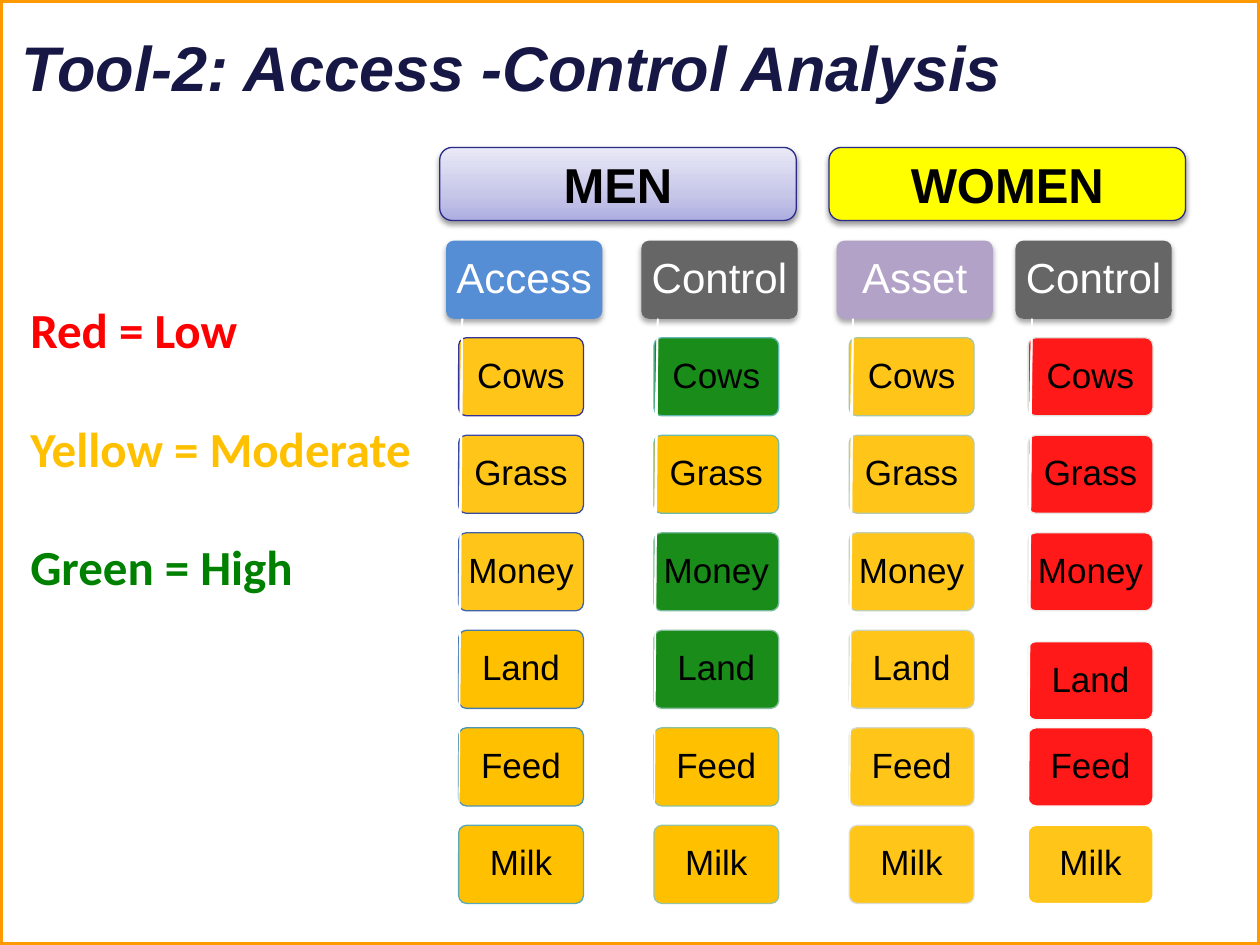
"""Build the access and control analysis slide with rated resources for men and women."""
from copy import deepcopy
from dataclasses import dataclass

from lxml import etree
from pptx import Presentation
from pptx.dml.color import RGBColor
from pptx.enum.shapes import MSO_CONNECTOR, MSO_SHAPE
from pptx.enum.text import MSO_ANCHOR, MSO_AUTO_SIZE, PP_ALIGN
from pptx.oxml.ns import qn
from pptx.util import Inches, Pt

ROUNDED, RECTANGLE = MSO_SHAPE.ROUNDED_RECTANGLE, MSO_SHAPE.RECTANGLE
STRAIGHT = MSO_CONNECTOR.STRAIGHT
TOP, MIDDLE = MSO_ANCHOR.TOP, MSO_ANCHOR.MIDDLE
LEFT, CENTER = PP_ALIGN.LEFT, PP_ALIGN.CENTER
NO_AUTOFIT = MSO_AUTO_SIZE.NONE

COLORS = {
    "low": "FF0000", "moderate": "FFC000", "high": "008000",
    "access": "558ED5", "control": "666666", "asset": "B3A2C7",
    "women": "FFFF00", "group_line": "2A2A89", "title": "171745",
    "frame": "FF9900", "white": "FFFFFF", "black": "000000",
}
MEN_GRADIENT = ((0, "ADADE1"), (0.35, "C6C6E9"), (1, "E9E9F7"))
RESOURCES = ("Cows", "Grass", "Money", "Land", "Feed", "Milk")
LEGEND = (("Red = Low", "low"), ("Yellow = Moderate", "moderate"), ("Green = High", "high"))

HEADER_TOP, HEADER_WIDTH, BOX_HEIGHT = 1.91, 1.24, 0.62
HEADER_BOTTOM = HEADER_TOP + BOX_HEIGHT
CARD_WIDTH, CARD_TOP, LAST_CARD_TOP = 0.99, 2.68, 6.55
CARD_PITCH = (LAST_CARD_TOP - CARD_TOP) / (len(RESOURCES) - 1)
HEADER_OUTDENT, STEM_INSET = 0.1, 0.03

BOX_FRAME = {
    "word_wrap": False, "vertical_anchor": MIDDLE,
    "margin_left": Inches(0.03), "margin_right": Inches(0.03),
    "margin_top": Inches(0.03), "margin_bottom": Inches(0.03),
}
GROUP_FRAME = {"word_wrap": True, "vertical_anchor": MIDDLE}
TITLE_FRAME = {"word_wrap": False, "vertical_anchor": TOP, "auto_size": NO_AUTOFIT}
LEGEND_FRAME = {"word_wrap": True, "vertical_anchor": TOP, "auto_size": NO_AUTOFIT}
BOX_PARAGRAPH = {"alignment": CENTER, "line_spacing": 0.9}
GROUP_PARAGRAPH = {"alignment": CENTER}
LEGEND_PARAGRAPH = {"alignment": LEFT, "space_before": Pt(0), "space_after": Pt(34)}
HEADER_FONT = {"name": "Arial", "size": Pt(24)}
CARD_FONT = {"name": "Arial", "size": Pt(20)}
GROUP_FONT = {"name": "Arial", "size": Pt(28), "bold": True}
TITLE_FONT = {"name": "Arial", "size": Pt(36), "bold": True, "italic": True}
LEGEND_FONT = {"name": "Calibri", "size": Pt(28), "bold": True}


@dataclass
class Card:
    level: str
    outline: str
    opacity: int = 90
    drop: float = 0


@dataclass
class Column:
    header: str
    color: str
    left: float
    cards: tuple[Card, ...]


COLUMNS = (
    Column("Access", "access", 3.64, (
        Card("moderate", "333399"), Card("moderate", "394BA1"),
        Card("moderate", "3F63A8"), Card("moderate", "457CAF", 100),
        Card("moderate", "4C95B5", 100), Card("moderate", "58AAB6", 100))),
    Column("Control", "control", 5.19, (
        Card("high", "64B8B4"), Card("moderate", "70BAA9", 100),
        Card("high", "7BBCA2"), Card("high", "86BE9E"),
        Card("moderate", "90C19D", 100), Card("moderate", "9AC49E", 100))),
    Column("Asset", "asset", 6.74, (
        Card("moderate", "A7C7A4"), Card("moderate", "B6CBAE"),
        Card("moderate", "C2CFB7"), Card("moderate", "CCD3C1"),
        Card("moderate", "D4D8C9"), Card("moderate", "DCDCD2"))),
    Column("Control", "control", 8.16, (
        Card("low", "E1E0DA"), Card("low", "E7E5E2"),
        Card("low", "ECEBEA"), Card("low", "F2F2F1", drop=0.09),
        Card("low", "F8F8F8"), Card("moderate", "FFFFFF"))),
)


def rgb(name: str) -> RGBColor:
    return RGBColor.from_string(COLORS.get(name, name))


def apply(target, formats: dict) -> None:
    for attribute, value in formats.items():
        setattr(target, attribute, value)


def place(shape, left: float, top: float, width: float, height: float) -> None:
    apply(shape, {"left": Inches(left), "top": Inches(top),
                  "width": Inches(width), "height": Inches(height)})


def write(paragraph, text: str, color: str, font: dict, layout: dict) -> None:
    run = paragraph.add_run()
    run.text = text
    apply(run.font, font)
    run.font.color.rgb = rgb(color)
    apply(paragraph, layout)


def add_box(slide, bounds: tuple, fill: str, outline: str = "", corner: float = 0.1):
    box = slide.shapes.add_shape(ROUNDED, *map(Inches, bounds))
    box.adjustments[0] = corner
    box.shadow.inherit = False
    box.fill.solid()
    box.fill.fore_color.rgb = rgb(fill)
    if outline:
        box.line.color.rgb = rgb(outline)
        box.line.width = Pt(0.75)
    else:
        box.line.fill.background()
    return box


def label(box, text: str, color: str, font: dict, frame: dict, layout: dict) -> None:
    apply(box.text_frame, frame)
    write(box.text_frame.paragraphs[0], text, color, font, layout)


def set_opacity(box, percent: int) -> None:
    color = box._element.spPr.find(qn("a:solidFill"))[0]
    etree.SubElement(color, qn("a:alpha"), val=str(percent * 1000))


def add_shadow(box, opacity: int, distance: float) -> None:
    effects = box._element.spPr.find(qn("a:effectLst"))
    shadow = etree.SubElement(effects, qn("a:outerShdw"), blurRad=str(Pt(3.1)),
                              dist=str(Pt(distance)), dir="5400000", rotWithShape="0")
    color = etree.SubElement(shadow, qn("a:srgbClr"), val=COLORS["black"])
    etree.SubElement(color, qn("a:alpha"), val=str(opacity * 1000))


def set_gradient(box, stops: tuple) -> None:
    box.fill.gradient()
    box.fill.gradient_angle = 90
    stop_list = box._element.spPr.find(qn("a:gradFill")).find(qn("a:gsLst"))
    stop_list.insert(1, deepcopy(stop_list[0]))
    for stop, (position, color) in zip(box.fill.gradient_stops, stops):
        stop.position = position
        stop.color.rgb = rgb(color)


def add_stem(slide, left: float, bottom: float) -> None:
    stem = slide.shapes.add_connector(STRAIGHT, *map(
        Inches, (left + STEM_INSET, HEADER_BOTTOM, left, bottom)))
    stem.line.color.rgb = rgb("white")
    stem.line.width = Pt(0.75)
    etree.SubElement(stem._element.spPr, qn("a:effectLst"))


def add_column(slide, column: Column) -> None:
    header = add_box(slide, (column.left - HEADER_OUTDENT, HEADER_TOP,
                             HEADER_WIDTH, BOX_HEIGHT), column.color)
    add_shadow(header, 35, 1.8)
    label(header, column.header, "white", HEADER_FONT, BOX_FRAME, BOX_PARAGRAPH)
    for row, (resource, card) in enumerate(zip(RESOURCES, column.cards)):
        top = CARD_TOP + row * CARD_PITCH + card.drop
        add_stem(slide, column.left, top + BOX_HEIGHT / 2)
        box = add_box(slide, (column.left, top, CARD_WIDTH, BOX_HEIGHT), card.level, card.outline)
        if card.opacity < 100:
            set_opacity(box, card.opacity)
        label(box, resource, "black", CARD_FONT, BOX_FRAME, BOX_PARAGRAPH)


def add_group(slide, text: str, left: float, fill: str):
    group = add_box(slide, (left, 1.17, 2.83, 0.58), fill, "group_line", 0.17)
    add_shadow(group, 38, 1.6)
    label(group, text, "black", GROUP_FONT, GROUP_FRAME, GROUP_PARAGRAPH)
    return group


def add_legend(legend) -> None:
    place(legend, 0.14, 2.33, 3.25, 2.46)
    apply(legend.text_frame, LEGEND_FRAME)
    for index, (text, level) in enumerate(LEGEND):
        frame = legend.text_frame
        paragraph = frame.add_paragraph() if index else frame.paragraphs[0]
        write(paragraph, text, level, LEGEND_FONT, LEGEND_PARAGRAPH)
        properties = paragraph._p.get_or_add_pPr()
        properties.set("marL", "0")
        properties.set("indent", "0")
        etree.SubElement(properties, qn("a:buNone"))


def main() -> None:
    deck = Presentation()
    apply(deck, {"slide_width": Inches(10), "slide_height": Inches(7.5)})
    slide = deck.slides.add_slide(deck.slide_layouts[1])
    title = slide.shapes.title
    place(title, 0.07, 0.18, 8.06, 0.71)
    label(title, "Tool-2: Access -Control Analysis", "title", TITLE_FONT,
          TITLE_FRAME, {"alignment": LEFT})
    add_legend(slide.placeholders[1])
    for column in COLUMNS:
        add_column(slide, column)
    set_gradient(add_group(slide, "MEN", 3.49, "white"), MEN_GRADIENT)
    add_group(slide, "WOMEN", 6.58, "women")
    frame = slide.shapes.add_shape(RECTANGLE, 0, 0, deck.slide_width, deck.slide_height)
    frame.shadow.inherit = False
    frame.fill.background()
    frame.line.color.rgb = rgb("frame")
    frame.line.width = Pt(3)
    deck.save("out.pptx")


if __name__ == "__main__":
    main()
